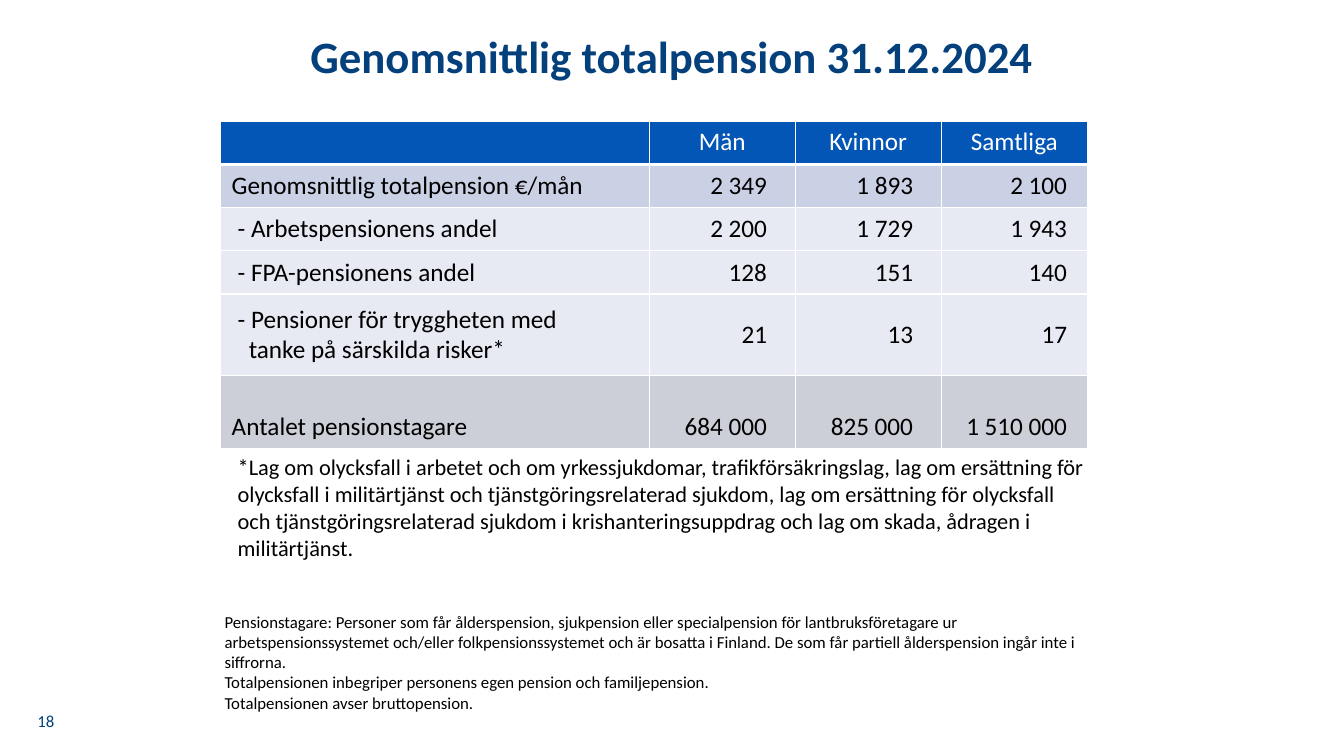
"""Build the slide on average total pension, with its table and notes."""
import pptx
import pptx.dml.color
import pptx.enum.text
import pptx.oxml
import pptx.oxml.ns
import pptx.util

Cm, Pt = pptx.util.Cm, pptx.util.Pt
ALIGN = pptx.enum.text.PP_ALIGN
ANCHOR = pptx.enum.text.MSO_ANCHOR
NAVY, BLACK, WHITE = "03407C", "000000", "FFFFFF"


def hue(code):
    return pptx.dml.color.RGBColor.from_string(code)


def dress(para, size, tone, bold=False, **form):
    for key, value in form.items():
        setattr(para, key, value)
    font = {"name": "Calibri", "size": Pt(size), "bold": bold}
    for key, value in font.items():
        setattr(para.font, key, value)
    para.font.color.rgb = hue(tone)


deck = pptx.Presentation()
deck.slide_width, deck.slide_height = Cm(33.87), Cm(19.05)
slide = deck.slides.add_slide(deck.slide_layouts[5])

title = slide.shapes.title
place = {"left": 0.46, "top": 0.74, "width": 32.94, "height": 2.13}
for key, value in place.items():
    setattr(title, key, Cm(value))
title.text_frame.text = "Genomsnittlig totalpension 31.12.2024"
title.text_frame.vertical_anchor = ANCHOR.TOP
dress(title.text_frame.paragraphs[0], 32, NAVY, True,
      alignment=ALIGN.CENTER, line_spacing=0.9)

rows = [
    ("0356B5", 1.09, ["", "Män", "Kvinnor", "Samtliga"]),
    ("CBD1E5", 1.09, ["Genomsnittlig totalpension €/mån", "2 349", "1 893", "2 100"]),
    ("E7E9F3", 1.09, ["- Arbetspensionens andel", "2 200", "1 729", "1 943"]),
    ("E7E9F3", 1.09, ["- FPA-pensionens andel", "128", "151", "140"]),
    ("E7E9F3", 2.06, ["- Pensioner för tryggheten med\vtanke på särskilda risker*",
                      "21", "13", "17"]),
    ("CCCFD7", 1.65, ["Antalet pensionstagare", "684 000", "825 000", "1 510 000"]),
]
wide = [10.82, 3.68, 3.68, 3.68]
last, end = len(rows) - 1, len(wide) - 1
table = slide.shapes.add_table(len(rows), len(wide), Cm(5.54), Cm(3.05),
                               Cm(sum(wide)), Cm(sum(row[1] for row in rows))).table
for col, width in zip(table.columns, wide):
    col.width = Cm(width)

for r, (fill, tall, texts) in enumerate(rows):
    table.rows[r].height = Cm(tall)
    for c, text in enumerate(texts):
        cell = table.cell(r, c)
        cell.text = text
        cell.fill.solid()
        cell.fill.fore_color.rgb = hue(fill)
        side = ALIGN.LEFT if c == 0 else ALIGN.RIGHT
        inset = (0.3, 0.1) if c == 0 else (0.03, 0.51 if c == end else 0.71)
        pad = 0.13 if c == 0 or r == last else 0.02
        anchor = ANCHOR.TOP if r == last and c else ANCHOR.MIDDLE
        if r == 0:
            side, inset, pad, anchor = ALIGN.CENTER, (0.25, 0.25), 0.13, ANCHOR.TOP
        form = {"margin_left": Cm(inset[0]), "margin_right": Cm(inset[1]),
                "margin_top": Cm(pad), "margin_bottom": Cm(pad),
                "vertical_anchor": anchor}
        for key, value in form.items():
            setattr(cell, key, value)
        para = cell.text_frame.paragraphs[0]
        dress(para, 18, BLACK if r else WHITE, alignment=side,
              line_spacing=2.0 if r == last else 1.0)
        if text.startswith("-"):
            props = para._p.get_or_add_pPr()
            props.set("marL", str(Cm(0.43)))
            props.set("indent", str(Cm(-0.28)))
        edges = {"lnL": 1 if c else 0.25, "lnR": 1 if c < end else 0.25,
                 "lnT": {0: 0.25, 1: 2.25}.get(r, 1),
                 "lnB": {0: 2.25, last: 0.25}.get(r, 1)}
        for i, (tag, size) in enumerate(edges.items()):
            line = pptx.oxml.parse_xml(
                f'<a:{tag} {pptx.oxml.ns.nsdecls("a")} w="{Pt(size)}"><a:solidFill>'
                f'<a:srgbClr val="{WHITE}"/></a:solidFill></a:{tag}>')
            cell._tc.get_or_add_tcPr().insert(i, line)

law = ("*Lag om olycksfall i arbetet och om yrkessjukdomar, trafikförsäkringslag, "
       "lag om ersättning för olycksfall i militärtjänst och tjänstgöringsrelaterad "
       "sjukdom, lag om ersättning för olycksfall och tjänstgöringsrelaterad sjukdom "
       "i krishanteringsuppdrag och lag om skada, ådragen i militärtjänst.")
terms = ("Pensionstagare: Personer som får ålderspension, sjukpension eller "
         "specialpension för lantbruksföretagare ur arbetspensionssystemet och/eller "
         "folkpensionssystemet och är bosatta i Finland. De som får partiell "
         "ålderspension ingår inte i siffrorna.\n"
         "Totalpensionen inbegriper personens egen pension och familjepension.\n"
         "Totalpensionen avser bruttopension.")
notes = [
    ((5.74, 11.3, 21.87, 3.0), law, 16, BLACK, ALIGN.LEFT, ANCHOR.TOP),
    ((5.41, 15.29, 23.06, 2.82), terms, 12, BLACK, ALIGN.LEFT, ANCHOR.TOP),
    ((0.51, 17.65, 1.3, 1.02), "18", 12, NAVY, ALIGN.CENTER, ANCHOR.MIDDLE),
]
for spot, text, size, tone, side, anchor in notes:
    frame = slide.shapes.add_textbox(*map(Cm, spot)).text_frame
    frame.word_wrap = True
    frame.vertical_anchor = anchor
    frame.text = text
    for para in frame.paragraphs:
        dress(para, size, tone, alignment=side)

deck.save("out.pptx")
